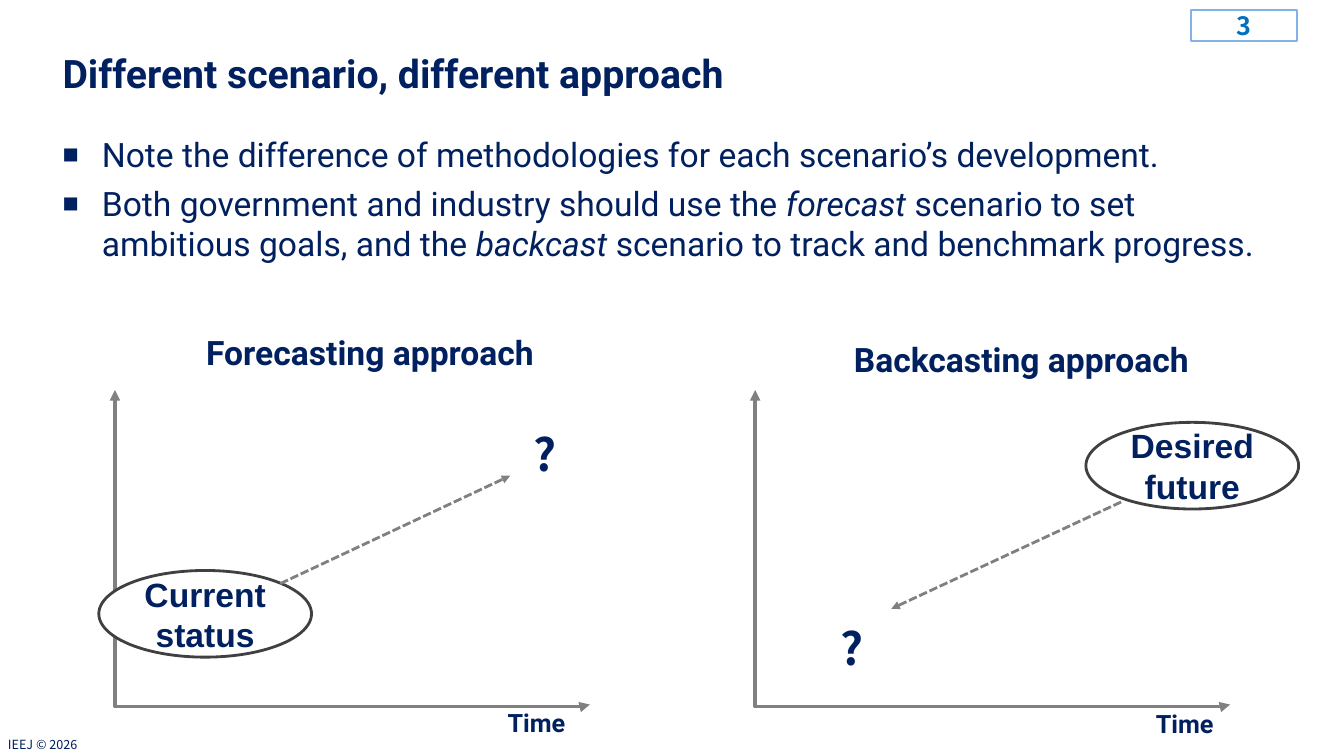
from lxml import etree
from pptx import Presentation
from pptx.dml.color import RGBColor
from pptx.enum.dml import MSO_LINE_DASH_STYLE as Dash
from pptx.enum.shapes import MSO_CONNECTOR as Connector, MSO_SHAPE as Preset
from pptx.enum.text import MSO_ANCHOR as Anchor, MSO_AUTO_SIZE as AutoSize, PP_ALIGN as Align
from pptx.oxml.ns import qn
from pptx.util import Inches, Pt

COLORS = {
    "navy": "002060", "blue": "0070C0", "sky": "82B2E6",
    "grey": "808080", "dark": "404040", "white": "FFFFFF",
}
SANS = "Noto Sans CJK JP"


def color(name):
    return RGBColor.from_string(COLORS[name])


def write(paragraph, text, size=24, font="Roboto", ink="navy", bold=True, italic=False, align=Align.CENTER):
    paragraph.alignment = align
    run = paragraph.add_run()
    run.text = text
    run.font.size = Pt(size)
    run.font.name = font
    run.font.bold = bold
    run.font.italic = italic
    run.font.color.rgb = color(ink)


deck = Presentation()
deck.slide_width, deck.slide_height = Inches(13.33), Inches(7.5)
slide = deck.slides.add_slide(deck.slide_layouts[1])
shapes = slide.shapes

title, points = shapes.title, slide.placeholders[1]
for holder, box, anchor in (
    (title, (0.52, 0.28, 11.02, 0.94), Anchor.MIDDLE),
    (points, (0.52, 1.28, 12.39, 1.33), Anchor.TOP),
):
    holder.left, holder.top, holder.width, holder.height = map(Inches, box)
    holder.text_frame.auto_size = AutoSize.NONE
    holder.text_frame.vertical_anchor = anchor

heading = title.text_frame.paragraphs[0]
heading.line_spacing = 0.9
write(heading, "Different scenario, different approach", size=28, align=Align.LEFT)

messages = [
    [("Note the difference of methodologies for each scenario’s development.", False)],
    [
        ("Both government and industry should use the ", False),
        ("forecast", True),
        (" scenario to set ambitious goals, and the ", False),
        ("backcast", True),
        (" scenario to track and benchmark progress.", False),
    ],
]
for index, message in enumerate(messages):
    frame = points.text_frame
    point = frame.add_paragraph() if index else frame.paragraphs[0]
    props = point._p.get_or_add_pPr()
    props.set("marL", str(Inches(0.39)))
    props.set("indent", str(-Inches(0.39)))
    bullet_color = etree.SubElement(props, qn("a:buClr"))
    etree.SubElement(bullet_color, qn("a:srgbClr"), val=COLORS["navy"])
    etree.SubElement(props, qn("a:buSzPct"), val="80000")
    etree.SubElement(props, qn("a:buChar"), char="■")
    point.space_before, point.space_after = Pt(0), Pt(6)
    for text, italic in message:
        write(point, text, bold=False, italic=italic, align=Align.LEFT)

page_box = shapes.add_shape(Preset.RECTANGLE, *map(Inches, (11.81, 0.1, 1.05, 0.31)))
page_box.shadow.inherit = False
page_box.fill.background()
page_box.line.color.rgb = color("sky")
page_box.line.width = Pt(1.5)
page_box.text_frame.vertical_anchor = Anchor.MIDDLE
write(page_box.text_frame.paragraphs[0], "3", size=18, font=SANS, ink="blue")

approaches = [
    {"axis": 1.14, "state": "Current status", "oval": (0.98, 5.66), "arrow": (2.78, 5.79, 5.06, 4.72)},
    {"axis": 7.49, "state": "Desired future", "oval": (10.77, 4.19), "arrow": (11.12, 4.98, 8.84, 6.04)},
]
for approach in approaches:
    left, right = approach["axis"], approach["axis"] + 4.71
    pen = shapes.build_freeform(Inches(left), Inches(3.87))
    corners = [(left, 7.01), (right, 7.01), (right, 6.99)]
    pen.add_line_segments([(Inches(x), Inches(y)) for x, y in corners], close=False)
    axes = pen.convert_to_shape()
    axes.shadow.inherit = False
    axes.fill.background()
    axes.line.color.rgb = color("grey")
    axes.line.width = Pt(2.5)
    for end in ("a:headEnd", "a:tailEnd"):
        etree.SubElement(axes.line._get_or_add_ln(), qn(end), type="triangle")

    oval = shapes.add_shape(Preset.OVAL, *map(Inches, approach["oval"]), Inches(2.11), Inches(0.86))
    oval.shadow.inherit = False
    oval.fill.solid()
    oval.fill.fore_color.rgb = color("white")
    oval.line.color.rgb = color("dark")
    oval.line.width = Pt(2)
    oval.text_frame.word_wrap = True
    oval.text_frame.vertical_anchor = Anchor.MIDDLE
    write(oval.text_frame.paragraphs[0], approach["state"], font="Arial")

    arrow = shapes.add_connector(Connector.STRAIGHT, *map(Inches, approach["arrow"]))
    arrow.line.color.rgb = color("grey")
    arrow.line.width = Pt(2)
    arrow.line.dash_style = Dash.SQUARE_DOT
    etree.SubElement(arrow.line._get_or_add_ln(), qn("a:tailEnd"), type="triangle")
    etree.SubElement(arrow._element.spPr, qn("a:effectLst"))

question = {"size": 32, "font": SANS}
labels = [
    ("?", (5, 4.18, 0.81, 0.64), question),
    ("?", (8.05, 6.11, 0.81, 0.64), question),
    ("Forecasting approach", (1.68, 3.24, 3.98, 0.5), {}),
    ("Backcasting approach", (8.14, 3.31, 3.98, 0.5), {}),
    ("Time", (4.83, 6.97, 0.98, 0.4), {"size": 18}),
    ("Time", (11.26, 6.98, 0.98, 0.4), {"size": 18}),
    ("IEEJ © 2026", (-0.02, 7.26, 0.99, 0.25), {"size": 9, "font": SANS, "bold": False, "align": Align.LEFT}),
]
for text, box, style in labels:
    label = shapes.add_textbox(*map(Inches, box))
    label.text_frame.word_wrap = True
    write(label.text_frame.paragraphs[0], text, **style)

deck.save("out.pptx")
